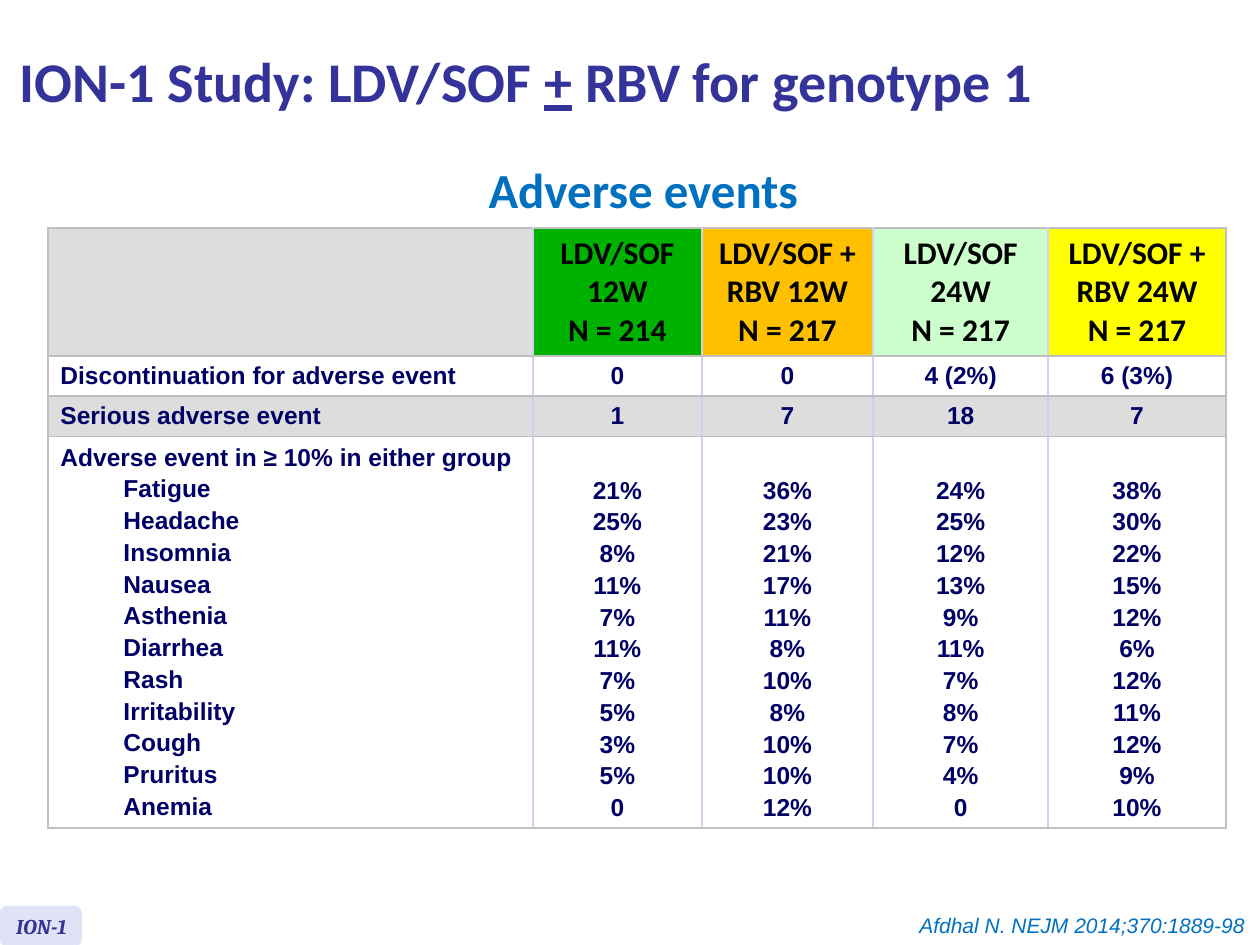
from pptx import Presentation
from pptx.dml.color import RGBColor
from pptx.enum.shapes import MSO_SHAPE as Shape
from pptx.enum.text import MSO_ANCHOR as Anchor, PP_ALIGN as Align
from pptx.oxml import parse_xml
from pptx.oxml.ns import nsdecls
from pptx.util import Inches, Pt

INDIGO, BLUE, NAVY = "333399", "0070C0", "000066"
GREY, WHITE = "DDDDDD", "FFFFFF"
OUTER_LINE, COLUMN_LINE = "C0C0C0", "D0D0F0"


def rgb(hex_code):
    return RGBColor.from_string(hex_code)


class SlideBuilder:
    LINE_GAP = Pt(2.4)

    def __init__(self, slide):
        self.slide = slide

    def style(self, run, size, face, color, bold=True, italic=False):
        font = run.font
        font.size, font.name = Pt(size), face
        font.bold, font.italic = bold, italic
        font.color.rgb = rgb(color)

    def text(self, box, parts, size, face, color, bold=True, italic=False,
             align=Align.LEFT, anchor=Anchor.TOP):
        """Add one line of text made of parts; return its runs."""
        frame = self.slide.shapes.add_textbox(*map(Inches, box)).text_frame
        frame.word_wrap, frame.vertical_anchor = True, anchor
        line = frame.paragraphs[0]
        line.alignment = align
        for part in parts:
            run = line.add_run()
            run.text = part
            self.style(run, size, face, color, bold, italic)
        return line.runs

    def badge(self, box, fill):
        shape = self.slide.shapes.add_shape(Shape.ROUNDED_RECTANGLE, *map(Inches, box))
        shape.shadow.inherit = False
        shape.fill.solid()
        shape.fill.fore_color.rgb = rgb(fill)
        shape.line.fill.background()

    def table(self, box, widths, heights):
        table = self.slide.shapes.add_table(
            len(heights), len(widths), *map(Inches, box)).table
        table.first_row = table.horz_banding = False
        for column, width in zip(table.columns, widths):
            column.width = Inches(width)
        for row, height in zip(table.rows, heights):
            row.height = Inches(height)
        return table

    def borders(self, cell, first, last):
        sides = {"lnL": OUTER_LINE if first else COLUMN_LINE,
                 "lnR": OUTER_LINE if last else COLUMN_LINE,
                 "lnT": OUTER_LINE, "lnB": OUTER_LINE}
        properties = cell._tc.get_or_add_tcPr()
        for tag, color in sides.items():
            properties.append(parse_xml(
                f'<a:{tag} {nsdecls("a")} w="12700"><a:solidFill>'
                f'<a:srgbClr val="{color}"/></a:solidFill></a:{tag}>'))

    def cell(self, cell, lines, fill, size, face, color, align, anchor=Anchor.MIDDLE,
             gap=0, indent_rest=False):
        cell.fill.solid()
        cell.fill.fore_color.rgb = rgb(fill)
        cell.vertical_anchor = anchor
        cell.text_frame.text = "\n".join(lines)
        for number, line in enumerate(cell.text_frame.paragraphs):
            line.alignment = align
            if number:
                line.space_before = gap
                if indent_rest:
                    line.level = 1
                    line._p.get_or_add_pPr().set("marL", str(Inches(0.5)))
            for run in line.runs:
                self.style(run, size, face, color)


ARMS = [("LDV/SOF 12W", "N = 214", "00B200"),
        ("LDV/SOF + RBV 12W", "N = 217", "FFC000"),
        ("LDV/SOF 24W", "N = 217", "CCFFCC"),
        ("LDV/SOF + RBV 24W", "N = 217", "FFFF00")]
SUMMARY = [("Discontinuation for adverse event", ["0", "0", "4 (2%)", "6 (3%)"], WHITE),
           ("Serious adverse event", ["1", "7", "18", "7"], GREY)]
EVENTS = {"Fatigue": ("21%", "36%", "24%", "38%"),
          "Headache": ("25%", "23%", "25%", "30%"),
          "Insomnia": ("8%", "21%", "12%", "22%"),
          "Nausea": ("11%", "17%", "13%", "15%"),
          "Asthenia": ("7%", "11%", "9%", "12%"),
          "Diarrhea": ("11%", "8%", "11%", "6%"),
          "Rash": ("7%", "10%", "7%", "12%"),
          "Irritability": ("5%", "8%", "8%", "11%"),
          "Cough": ("3%", "10%", "7%", "12%"),
          "Pruritus": ("5%", "10%", "4%", "9%"),
          "Anemia": ("0", "12%", "0", "10%")}


def main():
    deck = Presentation()
    deck.slide_width, deck.slide_height = Inches(10), Inches(7.5)
    page = SlideBuilder(deck.slides.add_slide(deck.slide_layouts[6]))

    # Adverse event table
    events = page.table((0.38, 1.81, 9.35, 4.45), [3.85, 1.34, 1.36, 1.39, 1.41],
                        [0.82, 0.26, 0.26, 3.11])
    for row in events.rows:
        for column, cell in enumerate(row.cells):
            page.borders(cell, column == 0, column == len(ARMS))

    # Treatment arms
    header = (18, "Calibri", "000000", Align.CENTER)
    page.cell(events.cell(0, 0), [], GREY, *header)
    for column, (arm, patients, fill) in enumerate(ARMS, 1):
        page.cell(events.cell(0, column), [arm, patients], fill, *header)

    # Summary rows
    body = (14, "Arial", NAVY)
    for row, (label, counts, fill) in enumerate(SUMMARY, 1):
        page.cell(events.cell(row, 0), [label], fill, *body, Align.LEFT)
        for column, count in enumerate(counts, 1):
            page.cell(events.cell(row, column), [count], fill, *body, Align.CENTER)

    # Common events: rates sit at the bottom, level with the event names
    page.cell(events.cell(3, 0), ["Adverse event in ≥ 10% in either group", *EVENTS],
              WHITE, *body, Align.LEFT, gap=page.LINE_GAP, indent_rest=True)
    for column, rates in enumerate(zip(*EVENTS.values()), 1):
        page.cell(events.cell(3, column), rates, WHITE, *body, Align.CENTER,
                  Anchor.BOTTOM, page.LINE_GAP)

    # Headings
    page.text((0.43, 1.22, 9.35, 0.57), ["Adverse events"], 28, "Calibri", BLUE,
              align=Align.CENTER)
    title = page.text((0.06, 0.03, 9.83, 1.21),
                      ["ION-1 Study: LDV/SOF ", "+", " RBV for genotype 1"],
                      32, "Calibri", INDIGO, anchor=Anchor.MIDDLE)
    title[1].font.underline = True

    # Study badge and citation
    page.badge((0, 7.19, 0.65, 0.32), "E2E2F6")
    page.text((0.03, 7.2, 0.79, 0.3), ["ION-1"], 12, "Cambria", INDIGO, italic=True)
    page.text((6.17, 7.19, 3.81, 0.3), ["Afdhal N. NEJM 2014;370:1889-98"], 12, "Arial",
              BLUE, bold=False, italic=True, align=Align.RIGHT)

    deck.save("out.pptx")


if __name__ == "__main__":
    main()
